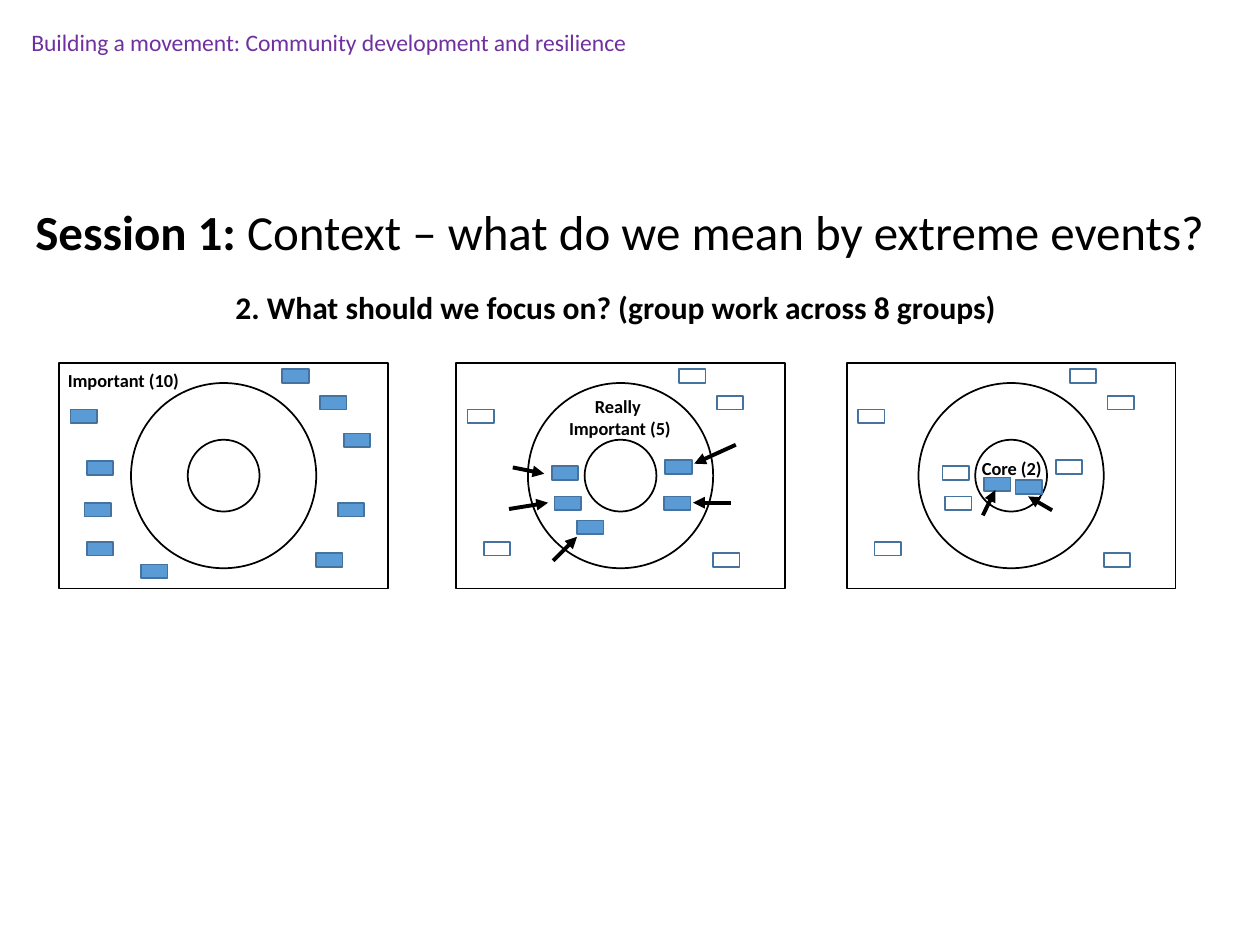
from lxml.etree import SubElement
from pptx import Presentation
from pptx.dml.color import RGBColor
from pptx.enum.shapes import MSO_CONNECTOR, MSO_SHAPE
from pptx.enum.text import MSO_ANCHOR, MSO_AUTO_SIZE, PP_ALIGN
from pptx.oxml.ns import qn
from pptx.util import Inches, Pt

BLACK = RGBColor(0x00, 0x00, 0x00)
WHITE = RGBColor(0xFF, 0xFF, 0xFF)
PURPLE = RGBColor(0x70, 0x30, 0xA0)
BLUE = RGBColor(0x5B, 0x9B, 0xD5)
DARK_BLUE = RGBColor(0x43, 0x73, 0x9E)

HEADER = "Building a movement: Community development and resilience"
TITLE = [[("Session 1: ", True), ("Context – what do we mean by extreme events?", False)]]
QUESTION = "2. What should we focus on? (group work across 8 groups)"

PANEL_TOP, PANEL_W, PANEL_H = 2.88, 2.61, 1.79
RING_CENTRE = (1.305, 0.895)
RING_SIZES = (1.47, 0.57)
CARD_W, CARD_H = 0.21, 0.11

# Positions below are measured from the top left corner of a panel.
OUTER = [(0.09, 0.37), (0.22, 1.42), (2.04, 1.51), (2.07, 0.26), (1.77, 0.05)]
MIDDLE = [(0.76, 0.82), (0.78, 1.06), (1.66, 0.77)]

PANELS = [
    dict(left=0.47, label=["Important (10)"], label_at=(-0.03, 0, 1.1, 0.28),
         align=PP_ALIGN.LEFT, hollow=[],
         filled=OUTER + [(0.22, 0.78), (0.2, 1.11), (0.65, 1.6), (2.21, 1.11), (2.26, 0.56)],
         arrows=[]),
    dict(left=3.62, label=["Really ", "Important (5)"], label_at=(0.79, 0.21, 1.02, 0.45),
         align=PP_ALIGN.CENTER, hollow=OUTER,
         filled=MIDDLE + [(1.65, 1.06), (0.96, 1.25)],
         arrows=[((2.18, 1.11), (1.88, 1.11)), ((0.77, 1.57), (0.96, 1.38)),
                 ((0.45, 0.83), (0.7, 0.88)), ((2.22, 0.65), (1.89, 0.8)),
                 ((0.42, 1.16), (0.73, 1.11))]),
    dict(left=6.72, label=["Core (2)"], label_at=(0.97, 0.7, 0.68, 0.28),
         align=PP_ALIGN.CENTER, hollow=OUTER + MIDDLE,
         filled=[(1.34, 0.93), (1.09, 0.91)],
         arrows=[((1.08, 1.21), (1.18, 1.01)), ((1.63, 1.17), (1.44, 1.06))]),
]


def write(sp, paragraphs, size, color=BLACK, align=PP_ALIGN.LEFT):
    """Fill sp with paragraphs, each a list of (text, bold) runs."""
    tf = sp.text_frame
    tf.word_wrap = False
    tf.auto_size = MSO_AUTO_SIZE.NONE
    tf.vertical_anchor = MSO_ANCHOR.TOP
    for i, runs in enumerate(paragraphs):
        p = tf.add_paragraph() if i else tf.paragraphs[0]
        p.alignment = align
        for text, bold in runs:
            r = p.add_run()
            r.text = text
            r.font.name = "Calibri"
            r.font.size = Pt(size)
            r.font.bold = bold
            r.font.color.rgb = color


def add_text(shapes, box, paragraphs, size, **fmt):
    write(shapes.add_textbox(*map(Inches, box)), paragraphs, size, **fmt)


def add_outlined(shapes, kind, box, fill, line=BLACK):
    sp = shapes.add_shape(kind, *map(Inches, box))
    sp.shadow.inherit = False
    if fill is None:
        sp.fill.background()
    else:
        sp.fill.solid()
        sp.fill.fore_color.rgb = fill
    sp.line.color.rgb = line
    sp.line.width = Pt(1)


def add_arrow(shapes, start, end):
    cxn = shapes.add_connector(MSO_CONNECTOR.STRAIGHT, *map(Inches, start + end))
    cxn.line.color.rgb = BLACK
    cxn.line.width = Pt(2.25)
    SubElement(cxn.line._get_or_add_ln(), qn("a:tailEnd"), type="triangle")
    SubElement(cxn._element.spPr, qn("a:effectLst"))


def add_panel(slide, panel):
    def at(x, y):
        return panel["left"] + x, PANEL_TOP + y

    shapes = slide.shapes.add_group_shape().shapes
    add_outlined(shapes, MSO_SHAPE.RECTANGLE, at(0, 0) + (PANEL_W, PANEL_H), WHITE)
    for d in RING_SIZES:
        corner = at(*(c - d / 2 for c in RING_CENTRE))
        add_outlined(shapes, MSO_SHAPE.OVAL, corner + (d, d), WHITE)
    x, y, w, h = panel["label_at"]
    add_text(shapes, at(x, y) + (w, h), [[(line, True)] for line in panel["label"]],
             10.5, align=panel["align"])
    for cards, fill in ((panel["hollow"], None), (panel["filled"], BLUE)):
        for card in cards:
            add_outlined(shapes, MSO_SHAPE.RECTANGLE, at(*card) + (CARD_W, CARD_H),
                         fill, DARK_BLUE)
    for start, end in panel["arrows"]:
        add_arrow(slide.shapes, at(*start), at(*end))


def main():
    prs = Presentation()
    prs.slide_width, prs.slide_height = Inches(10), Inches(7.5)
    slide = prs.slides.add_slide(prs.slide_layouts[5])
    title = slide.shapes.title
    title.left, title.top, title.width, title.height = map(Inches, (0.18, 1.55, 9.67, 0.57))
    write(title, TITLE, 28)
    add_text(slide.shapes, (0.15, 0.17, 5.04, 0.33), [[(HEADER, False)]], 13.5, color=PURPLE)
    for panel in PANELS:
        add_panel(slide, panel)
    add_text(slide.shapes, (1.77, 2.24, 6.34, 0.4), [[(QUESTION, True)]], 18)
    prs.save("out.pptx")


if __name__ == "__main__":
    main()
